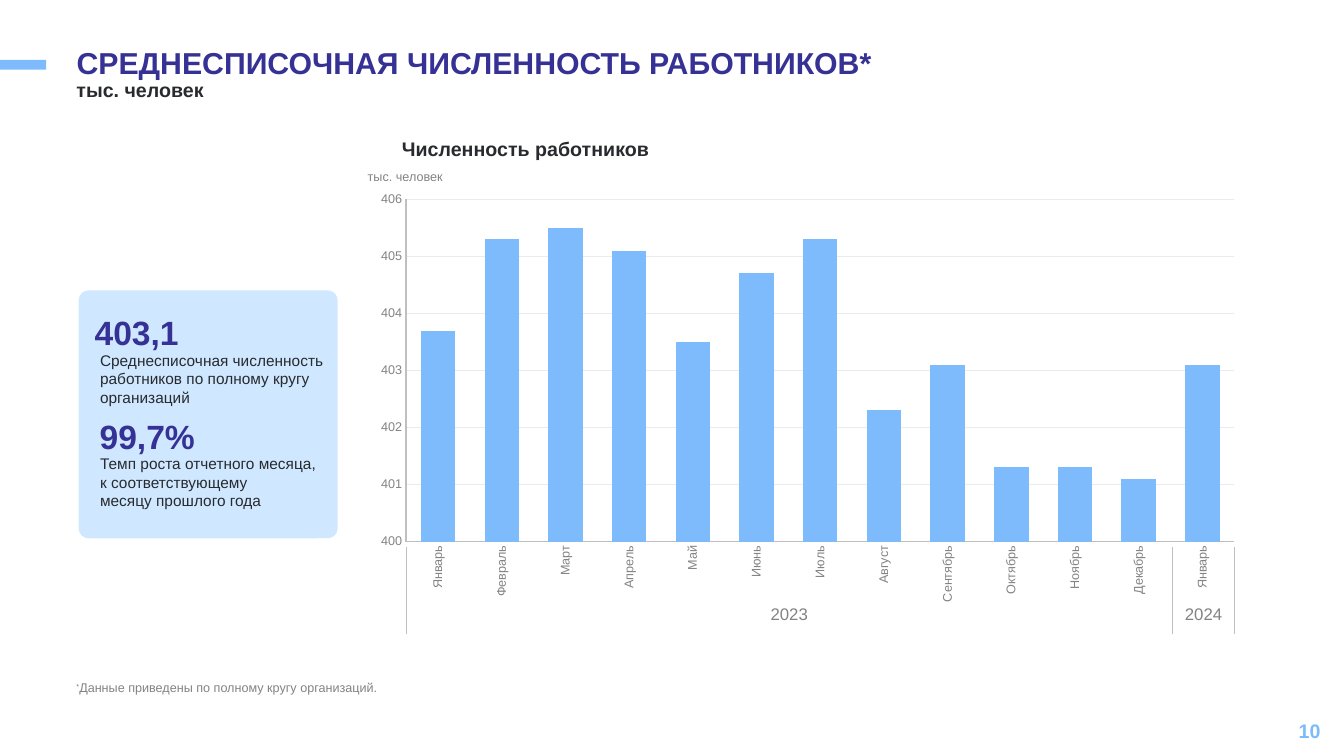
from dataclasses import dataclass
from typing import Any

from lxml import etree
from pptx import Presentation
from pptx.chart.data import CategoryChartData
from pptx.dml.color import RGBColor
from pptx.enum.chart import XL_CHART_TYPE, XL_TICK_MARK
from pptx.enum.shapes import MSO_CONNECTOR, MSO_SHAPE
from pptx.enum.text import MSO_ANCHOR, MSO_AUTO_SIZE, PP_ALIGN
from pptx.oxml import parse_xml
from pptx.oxml.ns import nsdecls, qn
from pptx.util import Pt

COLUMNS = XL_CHART_TYPE.COLUMN_CLUSTERED
NO_TICK = XL_TICK_MARK.NONE
STRAIGHT = MSO_CONNECTOR.STRAIGHT
RECTANGLE, ROUNDED = MSO_SHAPE.RECTANGLE, MSO_SHAPE.ROUNDED_RECTANGLE
TOP, MIDDLE = MSO_ANCHOR.TOP, MSO_ANCHOR.MIDDLE
LEFT, CENTER, RIGHT = PP_ALIGN.LEFT, PP_ALIGN.CENTER, PP_ALIGN.RIGHT
NO_AUTOFIT = MSO_AUTO_SIZE.NONE


@dataclass(frozen=True)
class Theme:
    font: str = "Arial"
    indigo: str = "363194"
    sky: str = "7DBBFC"
    pale: str = "CFE8FF"
    ink: str = "282A2E"
    grey: str = "838383"
    axis: str = "BFBFBF"
    grid: str = "EBEBEB"
    title: float = 21.6
    heading: float = 14
    figure: float = 24
    body: float = 11
    year: float = 12
    small: float = 9


@dataclass(frozen=True)
class Area:
    left: float
    top: float
    width: float
    height: float

    def lengths(self) -> tuple[Pt, Pt, Pt, Pt]:
        return Pt(self.left), Pt(self.top), Pt(self.width), Pt(self.height)


@dataclass(frozen=True)
class Fact:
    figure: str
    meaning: str
    figure_left: float


THEME = Theme()
FACTS = [
    Fact("403,1", "Среднесписочная численность\nработников по полному кругу\nорганизаций", 60.5),
    Fact("99,7%", "Темп роста отчетного месяца,\nк соответствующему\nмесяцу прошлого года", 64.1),
]
FACT_TOP, FACT_PITCH, MEANING_OFFSET = 219.6, 74.2, 27.4
MONTHS = ["Январь", "Февраль", "Март", "Апрель", "Май", "Июнь", "Июль", "Август",
          "Сентябрь", "Октябрь", "Ноябрь", "Декабрь", "Январь"]
HEADCOUNT = [403.7, 405.3, 405.5, 405.1, 403.5, 404.7, 405.3,
             402.3, 403.1, 401.3, 401.3, 401.1, 403.1]
YEARS = ["2023", "2024"]
YEAR_EDGES = [290.2, 837.4, 882]
PLOT_LAYOUT = {"x": 0.038, "y": 0.022, "w": 0.919, "h": 0.772}


def rgb(value: str) -> RGBColor:
    return RGBColor.from_string(value)


def write_text(frame: Any, text: str, *, size: float, color: str, bold: bool = False,
               align: Any = LEFT, anchor: Any = TOP, spacing: float = 1.0) -> None:
    frame.text = text
    frame.word_wrap = True
    frame.auto_size = NO_AUTOFIT
    frame.vertical_anchor = anchor
    for para in frame.paragraphs:
        para.alignment = align
        para.line_spacing = spacing
        for span in para.runs:
            span.font.name = THEME.font
            span.font.size = Pt(size)
            span.font.bold = bold
            span.font.color.rgb = rgb(color)


def add_text(slide: Any, text: str, area: Area, **text_format: Any) -> Any:
    box = slide.shapes.add_textbox(*area.lengths())
    write_text(box.text_frame, text, **text_format)
    return box


def add_panel(slide: Any, kind: Any, area: Area, color: str) -> Any:
    panel = slide.shapes.add_shape(kind, *area.lengths())
    panel.shadow.inherit = False
    panel.fill.solid()
    panel.fill.fore_color.rgb = rgb(color)
    panel.line.fill.background()
    return panel


def add_year_edge(slide: Any, left: float) -> None:
    edge = slide.shapes.add_connector(STRAIGHT, Pt(left), Pt(391), Pt(left), Pt(452.9))
    edge.line.color.rgb = rgb(THEME.axis)
    edge.line.width = Pt(1)
    etree.SubElement(edge._element.spPr, qn("a:effectLst"))


def format_axis(axis: Any) -> None:
    axis.major_tick_mark = axis.minor_tick_mark = NO_TICK
    axis.format.line.color.rgb = rgb(THEME.axis)
    axis.format.line.width = Pt(1)
    font = axis.tick_labels.font
    font.name, font.size = THEME.font, Pt(THEME.small)
    font.color.rgb = rgb(THEME.grey)


def place_plot(chart: Any) -> None:
    """Fix the inner plot rectangle as fractions of the chart."""
    plot_area = chart._chartSpace.chart.plotArea
    for layout in plot_area.findall(qn("c:layout")):
        plot_area.remove(layout)
    modes = "".join(f'<c:{side}Mode val="edge"/>' for side in "xy")
    places = "".join(f'<c:{side} val="{value}"/>' for side, value in PLOT_LAYOUT.items())
    plot_area.insert(0, parse_xml(
        f'<c:layout {nsdecls("c")}><c:manualLayout><c:layoutTarget val="inner"/>'
        f"{modes}{places}</c:manualLayout></c:layout>"))


def add_headcount_chart(slide: Any) -> None:
    data = CategoryChartData(number_format="0.0")
    data.categories = MONTHS
    data.add_series("Численность работников", HEADCOUNT)
    area = Area(265.7, 135.4, 643.7, 316.8)
    chart = slide.shapes.add_chart(COLUMNS, *area.lengths(), data).chart
    chart.has_title = chart.has_legend = False
    chart.font.name, chart.font.size = THEME.font, Pt(10)
    chart.font.color.rgb = rgb(THEME.ink)

    plot = chart.plots[0]
    plot.gap_width = 85
    plot.vary_by_categories = False
    fill = plot.series[0].format.fill
    fill.solid()
    fill.fore_color.rgb = rgb(THEME.sky)

    months, values = chart.category_axis, chart.value_axis
    format_axis(months)
    months._element.txPr.find(qn("a:bodyPr")).set("rot", "-5400000")
    format_axis(values)
    values.minimum_scale, values.maximum_scale, values.major_unit = 400, 406, 1
    values.tick_labels.number_format = "0"
    values.tick_labels.number_format_is_linked = False
    values.major_gridlines.format.line.color.rgb = rgb(THEME.grid)
    values.major_gridlines.format.line.width = Pt(0.75)
    place_plot(chart)


def add_years(slide: Any) -> None:
    for edge in YEAR_EDGES:
        add_year_edge(slide, edge)
    for year, left, right in zip(YEARS, YEAR_EDGES, YEAR_EDGES[1:]):
        box = add_text(slide, year, Area(left, 431, right - left, 15.8),
                       size=THEME.year, color=THEME.grey, align=CENTER)
        frame = box.text_frame
        frame.margin_left = frame.margin_right = frame.margin_top = frame.margin_bottom = 0


def add_facts(slide: Any) -> None:
    card = add_panel(slide, ROUNDED, Area(56.2, 207.4, 185, 177.1), THEME.pale)
    card.adjustments[0] = 0.041
    for index, fact in enumerate(FACTS):
        top = FACT_TOP + index * FACT_PITCH
        add_text(slide, fact.figure, Area(fact.figure_left, top, 120, 36),
                 size=THEME.figure, color=THEME.indigo, bold=True)
        add_text(slide, fact.meaning, Area(64.4, top + MEANING_OFFSET, 200, 47.5),
                 size=THEME.body, color=THEME.ink)


def add_footnote(slide: Any) -> None:
    box = add_text(slide, "*", Area(47.5, 482.4, 517, 23.8), size=THEME.small, color=THEME.grey)
    para = box.text_frame.paragraphs[0]
    para.runs[0]._r.get_or_add_rPr().set("baseline", "30000")
    span = para.add_run()
    span.text = "Данные приведены по полному кругу организаций."
    span.font.name, span.font.size = THEME.font, Pt(THEME.small)
    span.font.color.rgb = rgb(THEME.grey)


def main() -> None:
    deck = Presentation()
    deck.slide_width, deck.slide_height = Pt(960), Pt(540)
    slide = deck.slides.add_slide(deck.slide_layouts[5])

    title = slide.shapes.title
    title.left, title.top, title.width, title.height = Area(47.5, 31, 749.5, 41).lengths()
    write_text(title.text_frame, "СРЕДНЕСПИСОЧНАЯ ЧИСЛЕННОСТЬ РАБОТНИКОВ*",
               size=THEME.title, color=THEME.indigo, bold=True, spacing=0.9)
    add_panel(slide, RECTANGLE, Area(0, 42.8, 33, 7), THEME.sky)
    add_text(slide, "10", Area(734.4, 507.6, 216, 28.8), size=THEME.heading,
             color=THEME.sky, bold=True, align=RIGHT, anchor=MIDDLE)
    add_text(slide, "тыс. человек", Area(47.5, 54, 749.5, 31.7),
             size=THEME.heading, color=THEME.ink, bold=True, spacing=0.9)

    add_headcount_chart(slide)
    add_years(slide)
    add_text(slide, "Численность работников", Area(279.9, 94.3, 220, 24.5),
             size=THEME.heading, color=THEME.ink, bold=True)
    add_text(slide, "тыс. человек", Area(255.6, 117.4, 80, 18),
             size=THEME.small, color=THEME.grey)
    add_facts(slide)
    add_footnote(slide)
    deck.save("out.pptx")


if __name__ == "__main__":
    main()
